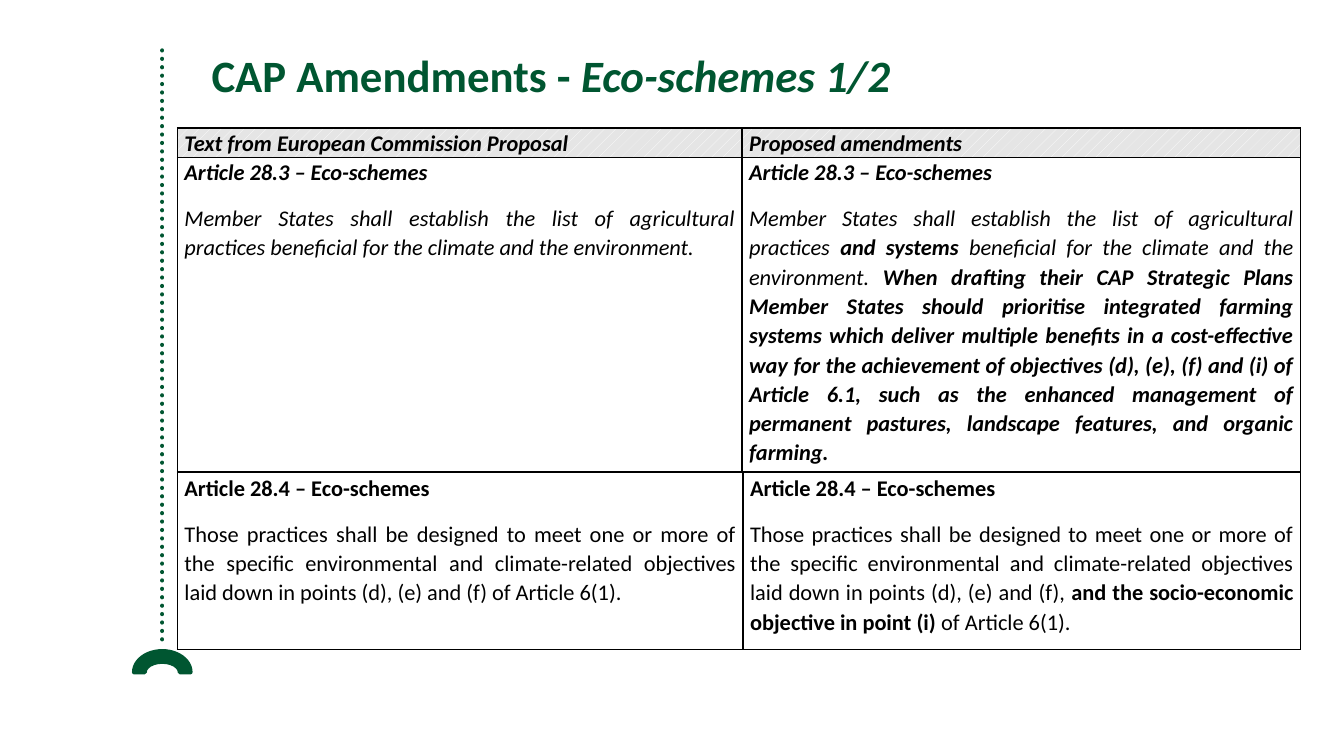
from lxml import etree
from pptx import Presentation
from pptx.dml.color import RGBColor
from pptx.enum.dml import MSO_LINE, MSO_PATTERN
from pptx.enum.shapes import MSO_CONNECTOR, MSO_SHAPE
from pptx.enum.text import MSO_ANCHOR, PP_ALIGN
from pptx.oxml import parse_xml
from pptx.oxml.ns import nsdecls, qn
from pptx.util import Inches, Pt

STRAIGHT = MSO_CONNECTOR.STRAIGHT
BLOCK_ARC = MSO_SHAPE.BLOCK_ARC
DOTTED = MSO_LINE.ROUND_DOT
SPECKLED = MSO_PATTERN.PERCENT_10
TOP = MSO_ANCHOR.TOP
LEFT, JUSTIFY = PP_ALIGN.LEFT, PP_ALIGN.JUSTIFY

GREEN = RGBColor(0x00, 0x56, 0x31)
BLACK = RGBColor(0x00, 0x00, 0x00)
WHITE = RGBColor(0xFF, 0xFF, 0xFF)
GREY = RGBColor(0xE5, 0xE5, 0xE5)

TITLE = [("CAP Amendments - ", {}), ("Eco-schemes 1/2", {"italic": True})]
BOLD = {"bold": True}

HEADINGS = [
    [[("Text from European Commission Proposal", BOLD)]],
    [[("Proposed amendments", BOLD)]],
]
ARTICLE_3 = [("Article 28.3 – Eco-schemes", BOLD)]
ARTICLE_4 = [("Article 28.4 – Eco-schemes", BOLD)]
PRACTICES = [
    [ARTICLE_3, [
        ("Member States shall establish the list of agricultural practices "
         "beneficial for the climate and the environment.", {}),
    ]],
    [ARTICLE_3, [
        ("Member States shall establish the list of agricultural practices ", {}),
        ("and systems ", BOLD),
        ("beneficial for the climate and the environment. ", {}),
        ("When drafting their CAP Strategic Plans Member States should prioritise "
         "integrated farming systems which deliver multiple benefits in a "
         "cost-effective way for the achievement of objectives (d), (e), (f) and (i) "
         "of Article 6.1, such as the enhanced management of permanent pastures, "
         "landscape features, and organic farming.", BOLD),
    ]],
]
OBJECTIVES = [
    [ARTICLE_4, [
        ("Those practices shall be designed to meet one or more of the specific "
         "environmental and climate-related objectives laid down in points (d), (e) "
         "and (f) of Article 6(1).", {}),
    ]],
    [ARTICLE_4, [
        ("Those practices shall be designed to meet one or more of the specific "
         "environmental and climate-related objectives laid down in points (d), (e) "
         "and (f), ", {}),
        ("and the socio-economic objective in point (i)", BOLD),
        (" of Article 6(1).", {}),
    ]],
]
TABLES = [
    {"top": 1.27, "widths": [5.6, 5.54], "heights": [0.29, 3.12],
     "rows": [HEADINGS, PRACTICES], "italic": True},
    {"top": 4.69, "widths": [5.61, 5.53], "heights": [1.75],
     "rows": [OBJECTIVES], "italic": False},
]
TABLE_LEFT = 1.76

TITLE_FONT = {"name": "Calibri", "size": Pt(32), "bold": True, "italic": False}
CELL_FONT = {"name": "Calibri", "size": Pt(16), "bold": False}
CELL_FORMAT = {"margin_left": Inches(0.07), "margin_right": Inches(0.07),
               "margin_top": 0, "margin_bottom": 0, "vertical_anchor": TOP}
PLAIN_TABLE = {"first_row": False, "horz_banding": False}


def set_all(target, values):
    for name, value in values.items():
        setattr(target, name, value)


def add_spans(para, spans, base, color):
    for text, changes in spans:
        span = para.add_run()
        span.text = text
        set_all(span.font, {**base, **changes})
        span.font.color.rgb = color


def add_borders(cell):
    properties = cell._tc.get_or_add_tcPr()
    for side in ("lnL", "lnR", "lnT", "lnB"):
        properties.append(parse_xml(
            f'<a:{side} {nsdecls("a")} w="{Pt(1)}"><a:solidFill>'
            f'<a:srgbClr val="{BLACK}"/></a:solidFill></a:{side}>'))


def fill_cell(cell, paragraphs, italic, heading):
    set_all(cell, CELL_FORMAT)
    add_borders(cell)
    if heading:
        cell.fill.patterned()
        cell.fill.pattern = SPECKLED
        cell.fill.fore_color.rgb = WHITE
        cell.fill.back_color.rgb = GREY
    else:
        cell.fill.background()
    frame = cell.text_frame
    for index, spans in enumerate(paragraphs):
        para = frame.add_paragraph() if index else frame.paragraphs[0]
        set_all(para, {"alignment": LEFT if heading else JUSTIFY, "line_spacing": 1.07,
                       "space_before": Pt(6 if index else 0), "space_after": Pt(6)})
        add_spans(para, spans, {**CELL_FONT, "italic": italic}, BLACK)


def add_amendments(page, content):
    widths, heights, rows = content["widths"], content["heights"], content["rows"]
    table = page.shapes.add_table(
        len(rows), len(widths), Inches(TABLE_LEFT), Inches(content["top"]),
        Inches(sum(widths)), Inches(sum(heights))).table
    set_all(table, PLAIN_TABLE)
    for column, width in zip(table.columns, widths):
        column.width = Inches(width)
    for row, height, cells in zip(table.rows, heights, rows):
        row.height = Inches(height)
        for cell, paragraphs in zip(row.cells, cells):
            fill_cell(cell, paragraphs, content["italic"], cells is HEADINGS)


def add_side_mark(page):
    stem = page.shapes.add_connector(
        STRAIGHT, Inches(1.61), Inches(0.5), Inches(1.61), Inches(6.41))
    stem.line.dash_style = DOTTED
    stem.line._get_or_add_ln().set("cap", "rnd")
    etree.SubElement(stem._element.spPr, qn("a:effectLst"))
    arc = page.shapes.add_shape(
        BLOCK_ARC, Inches(1.33), Inches(6.46), Inches(0.56), Inches(0.42))
    arc.shadow.inherit = False
    arc.fill.solid()
    arc.fill.fore_color.rgb = GREEN
    for shape in (stem, arc):
        shape.line.color.rgb = GREEN
        shape.line.width = Pt(3)


def add_title(page):
    box = page.shapes.add_textbox(Inches(2), Inches(0.42), Inches(10.67), Inches(1.25))
    set_all(box.text_frame, {"word_wrap": True, "vertical_anchor": TOP})
    add_spans(box.text_frame.paragraphs[0], TITLE, TITLE_FONT, GREEN)


def main():
    deck = Presentation()
    set_all(deck, {"slide_width": Inches(13.33), "slide_height": Inches(7.5)})
    page = deck.slides.add_slide(deck.slide_layouts[6])
    add_side_mark(page)
    add_title(page)
    for content in TABLES:
        add_amendments(page, content)
    deck.save("out.pptx")


if __name__ == "__main__":
    main()
